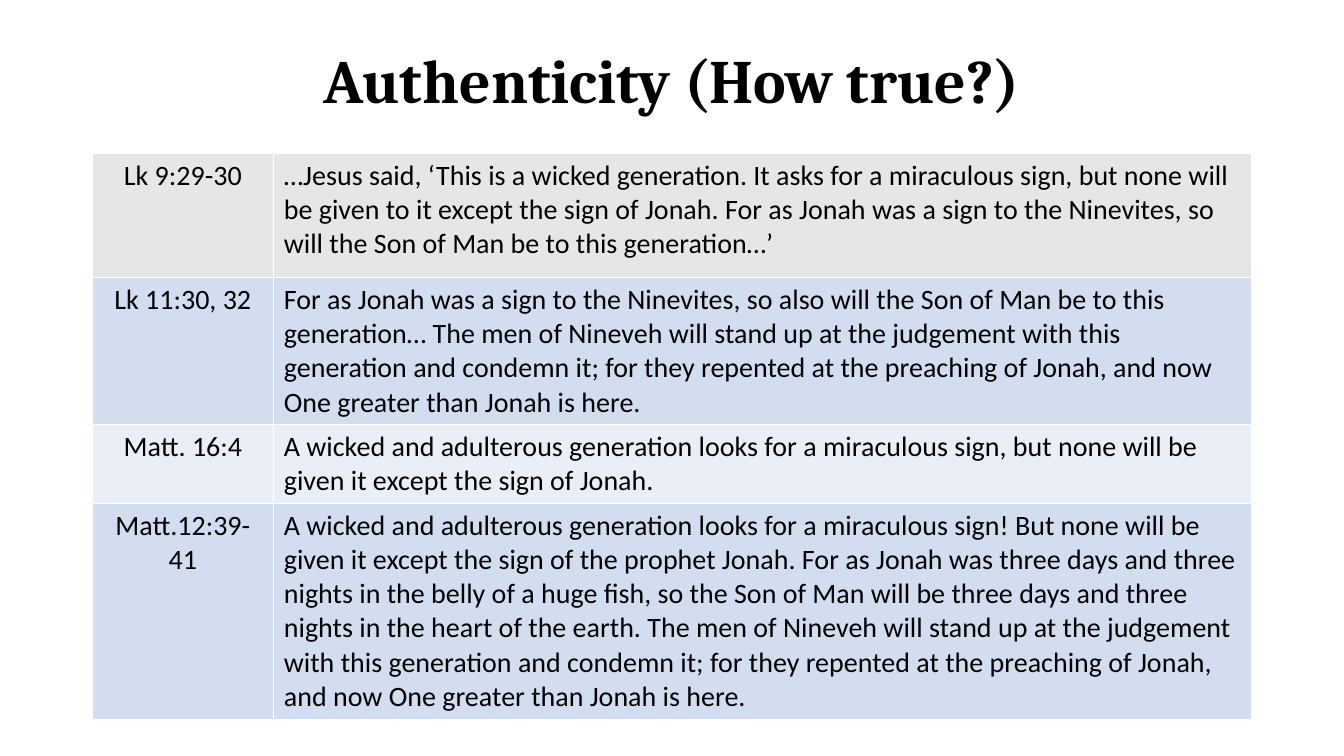
import pptx
import pptx.util
import pptx.dml.color
import pptx.enum.text
from pptx.util import Cm

COLOURS = {
    "text": "000000",
    "header": "E7E6E6",
    "dark band": "D2DEEF",
    "light band": "EAEFF7",
}

# Reference, quotation, fill, row height in cm
PASSAGES = [
    ("Lk 9:29-30",
     "…Jesus said, ‘This is a wicked generation. It asks for a miraculous sign, "
     "but none will be given to it except the sign of Jonah. For as Jonah was a "
     "sign to the Ninevites, so will the Son of Man be to this generation…’",
     "header", 3.12),
    ("Lk 11:30, 32",
     "For as Jonah was a sign to the Ninevites, so also will the Son of Man be to "
     "this generation… The men of Nineveh will stand up at the judgement with this "
     "generation and condemn it; for they repented at the preaching of Jonah, and "
     "now One greater than Jonah is here.",
     "dark band", 3.7),
    ("Matt. 16:4",
     "A wicked and adulterous generation looks for a miraculous sign, but none "
     "will be given it except the sign of Jonah.",
     "light band", 1.98),
    ("Matt.12:39-41",
     "A wicked and adulterous generation looks for a miraculous sign! But none "
     "will be given it except the sign of the prophet Jonah. For as Jonah was "
     "three days and three nights in the belly of a huge fish, so the Son of Man "
     "will be three days and three nights in the heart of the earth. The men of "
     "Nineveh will stand up at the judgement with this generation and condemn it; "
     "for they repented at the preaching of Jonah, and now One greater than Jonah "
     "is here.",
     "dark band", 5.42),
]


def colour(name):
    return pptx.dml.color.RGBColor.from_string(COLOURS[name])


def style_paragraph(paragraph, font_name, size, bold, alignment):
    paragraph.alignment = alignment
    paragraph.font.name = font_name
    paragraph.font.size = pptx.util.Pt(size)
    paragraph.font.bold = bold
    paragraph.font.color.rgb = colour("text")


presentation = pptx.Presentation()
presentation.slide_width = Cm(33.87)
presentation.slide_height = Cm(19.05)
slide = presentation.slides.add_slide(presentation.slide_layouts[6])
centre = pptx.enum.text.PP_ALIGN.CENTER
left = pptx.enum.text.PP_ALIGN.LEFT

# Table of passages: the default table style draws the white rules
table = slide.shapes.add_table(
    len(PASSAGES), 2, Cm(2.32), Cm(3.87), Cm(29.22), Cm(14.22)).table
table.columns[0].width = Cm(4.58)
table.columns[1].width = Cm(24.64)
for row_index, (reference, quotation, fill, height) in enumerate(PASSAGES):
    table.rows[row_index].height = Cm(height)
    for column_index, (text, alignment) in enumerate(
            [(reference, centre), (quotation, left)]):
        cell = table.cell(row_index, column_index)
        cell.text = text
        cell.fill.solid()
        cell.fill.fore_color.rgb = colour(fill)
        style_paragraph(cell.text_frame.paragraphs[0], "Calibri", 20, False, alignment)

# Title
title = slide.shapes.add_textbox(Cm(3.33), Cm(0.71), Cm(27.2), Cm(2.79))
title.text_frame.word_wrap = True
title.text_frame.vertical_anchor = pptx.enum.text.MSO_ANCHOR.MIDDLE
title.text_frame.text = "Authenticity (How true?)"
heading = title.text_frame.paragraphs[0]
heading.line_spacing = 0.9
style_paragraph(heading, "Cambria", 44, True, centre)

presentation.save("out.pptx")
